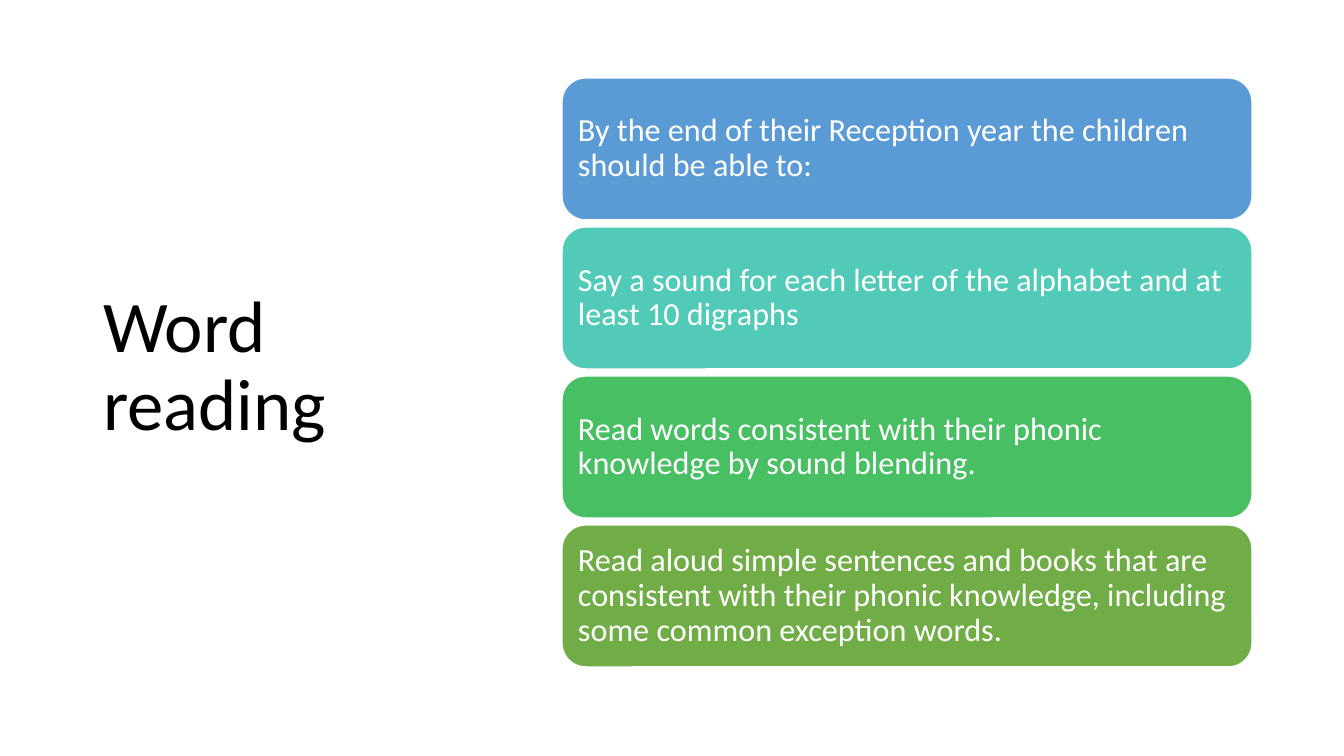
from pptx import Presentation
from pptx.dml.color import RGBColor
from pptx.enum.shapes import MSO_SHAPE
from pptx.enum.text import MSO_ANCHOR, MSO_AUTO_SIZE, PP_ALIGN
from pptx.util import Pt

ROUNDED = MSO_SHAPE.ROUNDED_RECTANGLE
MIDDLE = MSO_ANCHOR.MIDDLE
LEFT = PP_ALIGN.LEFT
NO_FIT = MSO_AUTO_SIZE.NONE
SLIDE_W, SLIDE_H = 1344, 756
SCALE = 12192000 / SLIDE_W
CARD_X, CARD_Y, CARD_W, CARD_H, CARD_STEP = 562, 78, 690, 142, 149


def px(n):
    return round(n * SCALE)


def write(shape, text, size, color):
    tf = shape.text_frame
    tf.text = text
    tf.word_wrap = True
    tf.auto_size = NO_FIT
    tf.vertical_anchor = MIDDLE
    p = tf.paragraphs[0]
    p.alignment = LEFT
    p.line_spacing = 0.9
    font = p.runs[0].font
    font.name = "Calibri"
    font.size = Pt(size)
    font.color.rgb = RGBColor.from_string(color)
    return tf


prs = Presentation()
prs.slide_width, prs.slide_height = px(SLIDE_W), px(SLIDE_H)
s = prs.slides.add_slide(prs.slide_layouts[5])

title = s.shapes.title
title.left, title.top, title.width, title.height = px(93), px(61), px(372), px(614)
write(title, "Word reading", 52, "000000")

cards = [
    ("By the end of their Reception year the children should be able to:", "5B9BD5"),
    ("Say a sound for each letter of the alphabet and at least 10 digraphs", "52CAB8"),
    ("Read words consistent with their phonic knowledge by sound blending.", "49BF64"),
    ("Read aloud simple sentences and books that are consistent with their phonic "
     "knowledge, including some common exception words.", "70AD47"),
]
for i, (text, color) in enumerate(cards):
    card = s.shapes.add_shape(ROUNDED, px(CARD_X), px(CARD_Y + i * CARD_STEP), px(CARD_W), px(CARD_H))
    card.shadow.inherit = False
    card.fill.solid()
    card.fill.fore_color.rgb = RGBColor.from_string(color)
    card.line.color.rgb = RGBColor.from_string("FFFFFF")
    card.line.width = Pt(1)
    tf = write(card, text, 23, "FFFFFF")
    tf.margin_left = tf.margin_right = tf.margin_top = tf.margin_bottom = px(9)

prs.save("out.pptx")
